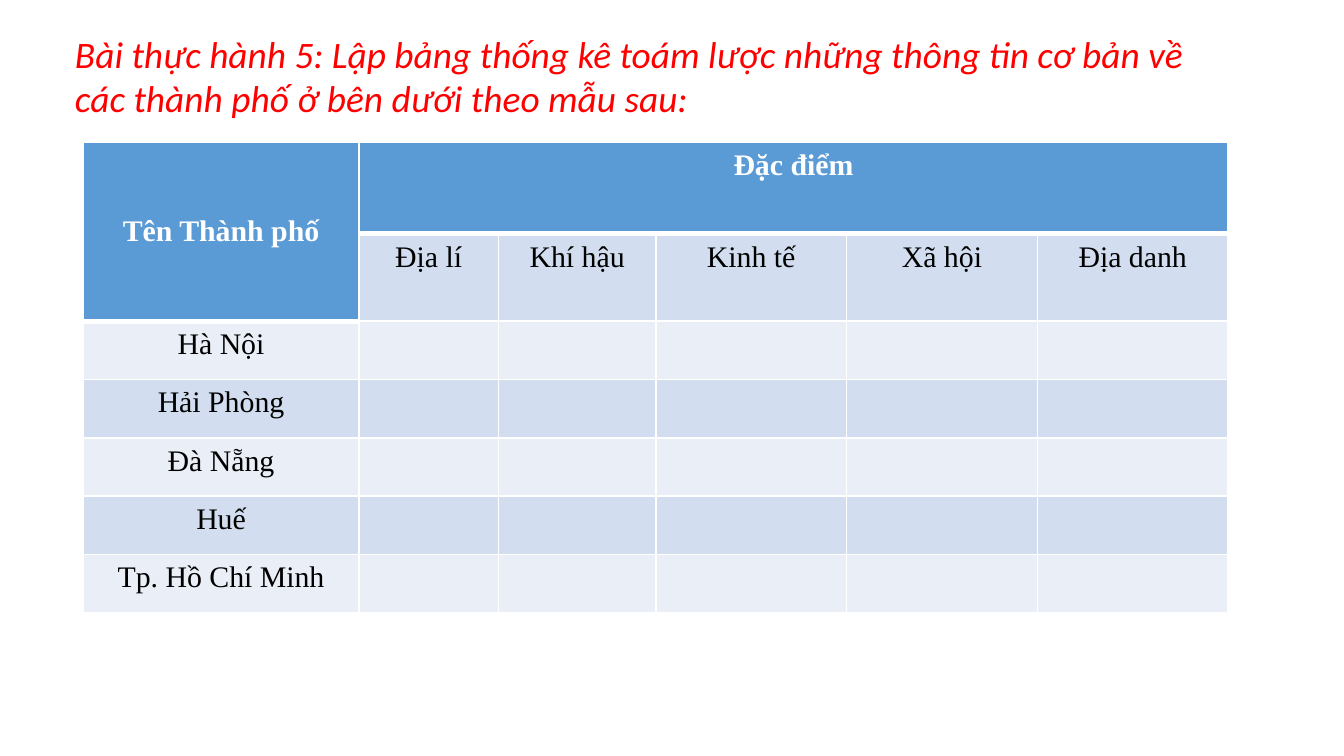
from dataclasses import dataclass

from lxml import etree
from pptx import Presentation
from pptx.dml.color import RGBColor
from pptx.enum import text as t
from pptx.oxml import ns
from pptx.util import Inches, Pt


@dataclass(frozen=True)
class Theme:
    red: str = "FF0000"
    black: str = "000000"
    white: str = "FFFFFF"
    head: str = "5B9BD5"
    dark: str = "D2DEEF"
    light: str = "EAEFF7"
    sans: str = "Calibri"
    serif: str = "Times New Roman"
    title: int = 20
    body: int = 16
    thin: int = 1
    thick: int = 3


THEME = Theme()
TITLE = ("Bài thực hành 5: Lập bảng thống kê toám lược những thông tin "
         "cơ bản về các thành phố ở bên dưới theo mẫu sau:")
TRAITS = ["Địa lí", "Khí hậu", "Kinh tế", "Xã hội", "Địa danh"]
CITIES = ["Hà Nội", "Hải Phòng", "Đà Nẵng", "Huế", "Tp. Hồ Chí Minh"]
WIDTHS = [2.05, 1.04, 1.17] + [1.42] * 3
TALL = 3.5
HEADS = [0.68, 0.65]
HEIGHTS = HEADS + [(TALL - sum(HEADS)) / len(CITIES)] * len(CITIES)


def write(frame, words, size=THEME.body, face=THEME.serif, color=THEME.black,
          bold=False, italic=False, align=t.PP_ALIGN.CENTER):
    para = frame.paragraphs[0]
    para.alignment = align
    run = para.add_run()
    run.text = words
    font = run.font
    font.size, font.name = Pt(size), face
    font.bold, font.italic = bold, italic
    font.color.rgb = RGBColor.from_string(color)


def add_title(slide):
    box = slide.shapes.add_textbox(Inches(0.46), Inches(0.18),
                                   Inches(8.84), Inches(0.77))
    frame = box.text_frame
    frame.word_wrap = True
    frame.auto_size = t.MSO_AUTO_SIZE.SHAPE_TO_FIT_TEXT
    write(frame, TITLE, size=THEME.title, face=THEME.sans, color=THEME.red,
          italic=True, align=t.PP_ALIGN.LEFT)


def edge(cell, side, width):
    props = cell._tc.get_or_add_tcPr()
    line = etree.SubElement(props, ns.qn(f"a:ln{side}"), w=str(Pt(width)))
    fill = etree.SubElement(line, ns.qn("a:solidFill"))
    etree.SubElement(fill, ns.qn("a:srgbClr"), val=THEME.white)


def is_head(row, col):
    return row == 0 or (row == 1 and col == 0)


def paint(cell, row, col):
    head = is_head(row, col)
    below = row > 0 and not head and is_head(row - 1, col)
    widths = {"L": THEME.thin, "R": THEME.thin,
              "T": THEME.thick if below else THEME.thin,
              "B": THEME.thick if head else THEME.thin}
    for side, width in widths.items():
        edge(cell, side, width)
    band = THEME.dark if row % 2 else THEME.light
    cell.fill.solid()
    cell.fill.fore_color.rgb = RGBColor.from_string(THEME.head if head else band)


def add_grid(slide):
    frame = slide.shapes.add_table(
        len(HEIGHTS), len(WIDTHS), Inches(0.62), Inches(1.06),
        Inches(sum(WIDTHS)), Inches(TALL))
    table = frame.table
    for col, width in zip(table.columns, WIDTHS):
        col.width = Inches(width)
    for row, height in zip(table.rows, HEIGHTS):
        row.height = Inches(height)
    for row in range(len(HEIGHTS)):
        for col in range(len(WIDTHS)):
            paint(table.cell(row, col), row, col)

    corner, top = table.cell(0, 0), table.cell(0, 1)
    corner.merge(table.cell(1, 0))
    top.merge(table.cell(0, len(TRAITS)))
    corner.vertical_anchor = t.MSO_ANCHOR.MIDDLE
    for cell, words in ((corner, "Tên Thành phố"), (top, "Đặc điểm")):
        write(cell.text_frame, words, color=THEME.white, bold=True)
    for col, words in enumerate(TRAITS, 1):
        write(table.cell(1, col).text_frame, words)
    for row, words in enumerate(CITIES, 2):
        write(table.cell(row, 0).text_frame, words)


def main():
    deck = Presentation()
    deck.slide_width, deck.slide_height = Inches(10), Inches(10 * 9 / 16)
    slide = deck.slides.add_slide(deck.slide_layouts[6])
    add_title(slide)
    add_grid(slide)
    deck.save("out.pptx")


if __name__ == "__main__":
    main()
